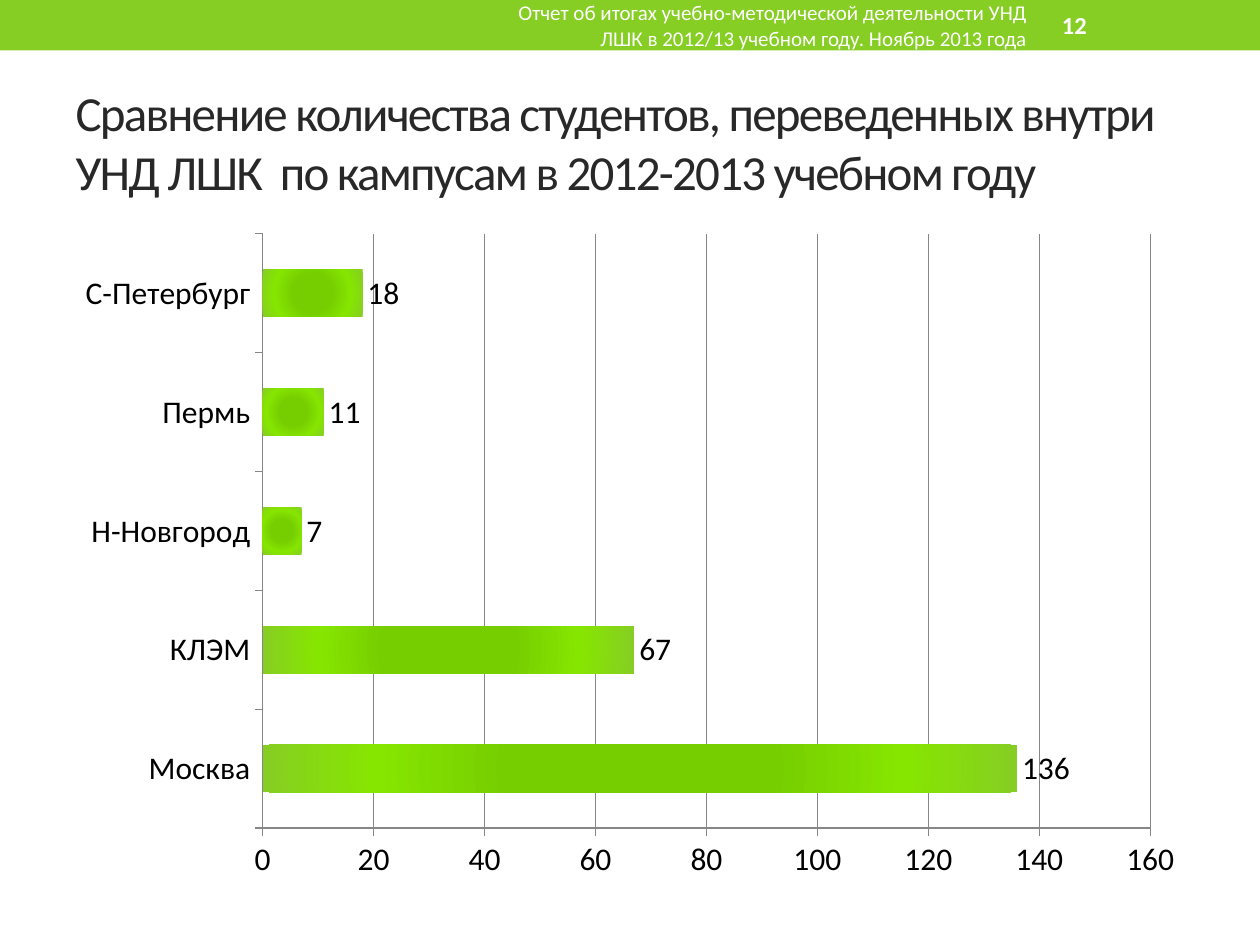
"""Build a slide comparing student transfers by campus."""
from dataclasses import dataclass

from lxml import etree
from pptx import Presentation
from pptx import util as u
from pptx.chart import data as chart_data
from pptx.dml import color
from pptx.enum import chart as ch
from pptx.enum import shapes, text
from pptx.oxml import ns

WIDTH, HEIGHT = u.Inches(10), u.Inches(7.5)
COLORS = {
    "band": "86CE24", "glow": "86E600", "core": "76CE00",
    "title": "282828", "light": "FFFFFF", "ink": "000000", "grid": "868686",
}
BAR_STOPS = ((0, "core"), (35, "core"), (70, "glow"), (100, "band"))
CAMPUSES = {"Москва": 136, "КЛЭМ": 67, "Н-Новгород": 7, "Пермь": 11, "С-Петербург": 18}


@dataclass(frozen=True)
class Area:
    """A rectangle given in percent of the slide's width and height."""
    left: float
    top: float
    width: float
    height: float

    def lengths(self) -> tuple:
        return (u.Emu(int(WIDTH * self.left / 100)), u.Emu(int(HEIGHT * self.top / 100)),
                u.Emu(int(WIDTH * self.width / 100)), u.Emu(int(HEIGHT * self.height / 100)))


@dataclass(frozen=True)
class Label:
    """A piece of text with its place and format."""
    words: str
    area: Area
    size: int
    color: str
    bold: bool = False
    align: text.PP_ALIGN = text.PP_ALIGN.LEFT


TITLE = Label("Сравнение количества студентов, переведенных внутри УНД ЛШК  "
              "по кампусам в 2012-2013 учебном году", Area(5, 7.73, 90, 14.4), 28, "title")
HEADER = (
    Label("Отчет об итогах учебно-методической деятельности УНД ЛШК "
          "в 2012/13 учебном году. Ноябрь 2013 года",
          Area(37.5, 0.27, 45, 4.8), 12, "light", align=text.PP_ALIGN.RIGHT),
    Label("12", Area(83.3, 0.27, 11.7, 4.8), 14, "light", bold=True),
)


def rgb(name: str) -> color.RGBColor:
    return color.RGBColor.from_string(COLORS[name])


def apply(target, values: dict) -> None:
    for name, value in values.items():
        setattr(target, name, value)


def set_font(font, size: int, name: str, bold: bool = False) -> None:
    apply(font, {"name": "Calibri", "size": u.Pt(size), "bold": bold})
    font.color.rgb = rgb(name)


def place(shape, area: Area) -> None:
    apply(shape, dict(zip(("left", "top", "width", "height"), area.lengths())))


def write(box, label: Label):
    place(box, label.area)
    apply(box.text_frame, {"word_wrap": True, "auto_size": text.MSO_AUTO_SIZE.NONE,
                           "vertical_anchor": text.MSO_ANCHOR.MIDDLE})
    para = box.text_frame.paragraphs[0]
    para.alignment = label.align
    span = para.add_run()
    span.text = label.words
    set_font(span.font, label.size, label.color, label.bold)
    return span


def add_band(page, area: Area) -> None:
    band = page.shapes.add_shape(shapes.MSO_SHAPE.RECTANGLE, *area.lengths())
    band.shadow.inherit = False
    band.fill.solid()
    band.fill.fore_color.rgb = rgb("band")
    band.line.fill.background()


def fill_radial(form, stops: tuple) -> None:
    form.fill.gradient()
    gradient = form._element.find(".//" + ns.qn("a:gradFill"))
    for child in list(gradient):
        gradient.remove(child)
    stop_list = etree.SubElement(gradient, ns.qn("a:gsLst"))
    for share, name in stops:
        stop = etree.SubElement(stop_list, ns.qn("a:gs"), pos=str(share * 1000))
        etree.SubElement(stop, ns.qn("a:srgbClr"), val=COLORS[name])
    circle = etree.SubElement(gradient, ns.qn("a:path"), path="circle")
    etree.SubElement(circle, ns.qn("a:fillToRect"), dict.fromkeys("ltrb", "50000"))


def style_line(line) -> None:
    line.color.rgb = rgb("grid")
    line.width = u.Pt(0.75)


def add_bars(page, area: Area, values: dict) -> None:
    table = chart_data.CategoryChartData()
    table.categories = list(values)
    table.add_series("Series 1", list(values.values()))
    chart = page.shapes.add_chart(ch.XL_CHART_TYPE.BAR_CLUSTERED, *area.lengths(), table).chart
    apply(chart, {"has_legend": False, "has_title": False})
    set_font(chart.font, 18, "ink")
    for axis in (chart.category_axis, chart.value_axis):
        apply(axis, {"major_tick_mark": ch.XL_TICK_MARK.OUTSIDE,
                     "minor_tick_mark": ch.XL_TICK_MARK.NONE})
        style_line(axis.format.line)
    apply(chart.value_axis, {"minimum_scale": 0, "maximum_scale": 160, "major_unit": 20,
                             "has_major_gridlines": True})
    style_line(chart.value_axis.major_gridlines.format.line)
    plot = chart.plots[0]
    apply(plot, {"gap_width": 150, "vary_by_categories": False, "has_data_labels": True})
    apply(plot.data_labels, {"show_value": True,
                             "position": ch.XL_LABEL_POSITION.OUTSIDE_END})
    set_font(plot.data_labels.font, 18, "ink")
    fill_radial(plot.series[0].format, BAR_STOPS)


def main() -> None:
    deck = Presentation()
    apply(deck, {"slide_width": WIDTH, "slide_height": HEIGHT})
    page = deck.slides.add_slide(deck.slide_layouts.get_by_name("Title Only"))
    add_band(page, Area(0, 0, 100, 5.33))
    span = write(page.shapes.title, TITLE)
    span.font._element.set("spc", "-100")
    for label in HEADER:
        write(page.shapes.add_textbox(*label.area.lengths()), label)
    add_bars(page, Area(5, 23.33, 90, 71.07), CAMPUSES)
    deck.save("out.pptx")


if __name__ == "__main__":
    main()
